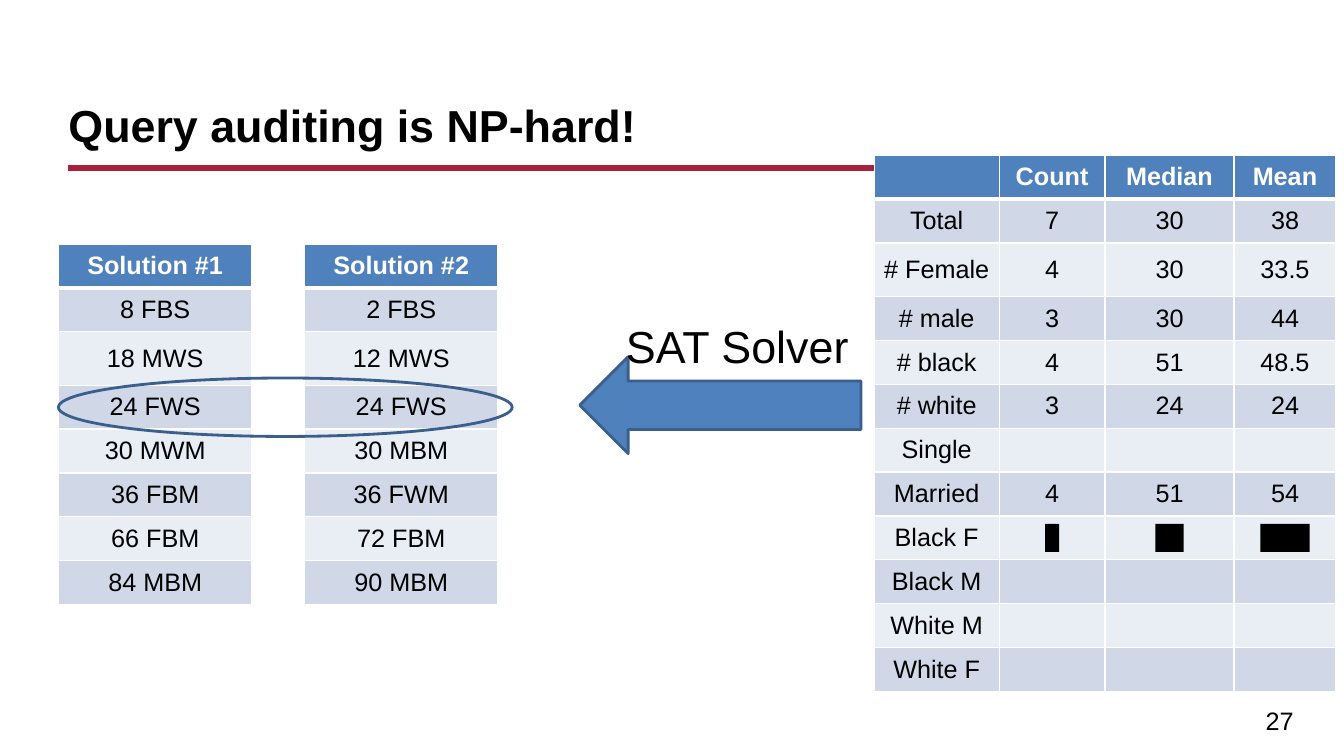
"""Build the slide on the hardness of query auditing."""
from dataclasses import dataclass
from typing import Any

from lxml.etree import SubElement
from pptx import Presentation
from pptx.dml.color import RGBColor
from pptx.enum.shapes import MSO_CONNECTOR, MSO_SHAPE
from pptx.enum.text import MSO_ANCHOR, PP_ALIGN
from pptx.oxml.ns import qn
from pptx.util import Inches, Pt

BLACK, WHITE, BLUE, OUTLINE, RED = "000000", "FFFFFF", "4F81BD", "3A5F8C", "A9203D"
BANDS = ("D0D8E8", "E9EDF4")
TALL_ROW, TALL_ROW_HEIGHT = 2, 0.53
BODY = {"name": "Arial", "size": Pt(18), "bold": False}
HEADER = BODY | {"bold": True}
TITLE = HEADER | {"size": Pt(32)}
CALLOUT = BODY | {"size": Pt(32)}


@dataclass(frozen=True)
class Label:
    text: str
    box: tuple[float, float, float, float]
    formats: dict[str, Any]
    frame: dict[str, Any]
    align: PP_ALIGN = PP_ALIGN.LEFT


@dataclass(frozen=True)
class Grid:
    left: float
    top: float
    height: float
    widths: tuple[float, ...]
    rows: list[tuple[str, ...]]

    def row_heights(self) -> list[float]:
        regular = (self.height - TALL_ROW_HEIGHT) / (len(self.rows) - 1)
        return [TALL_ROW_HEIGHT if row == TALL_ROW else regular
                for row in range(len(self.rows))]


@dataclass(frozen=True)
class Marker:
    kind: MSO_SHAPE
    box: tuple[float, float, float, float]
    fill: str | None = None
    outline: str | None = OUTLINE
    rotation: float = 0


def solution(left: float, *people: str) -> Grid:
    return Grid(left, 2.42, 3.58, (1.92,), [(person,) for person in people])


RULE = (0.67, 1.67, 12.67, 1.67)
LABELS = [
    Label("Query auditing is NP-hard!", (0.58, 0.3, 12.08, 1.25), TITLE,
          {"word_wrap": True, "vertical_anchor": MSO_ANCHOR.BOTTOM}),
    Label("27", (10.1, 6.95, 2.83, 0.39), BODY, {"word_wrap": True}, PP_ALIGN.RIGHT),
]
STATISTICS = Grid(8.67, 1.54, 5.32, (1.24, 1.05, 1.28, 1.01), [
    ("", "Count", "Median", "Mean"),
    ("Total", "7", "30", "38"),
    ("# Female", "4", "30", "33.5"),
    ("# male", "3", "30", "44"),
    ("# black", "4", "51", "48.5"),
    ("# white", "3", "24", "24"),
    ("Single", "", "", ""),
    ("Married", "4", "51", "54"),
    ("Black F", "", "", ""),
    ("Black M", "", "", ""),
    ("White M", "", "", ""),
    ("White F", "", "", ""),
])
REDACTED_ROW, REDACTION_HEIGHT = 8, 0.28
REDACTION_WIDTHS = (0.14, 0.28, 0.49)
ARROW = Marker(MSO_SHAPE.RIGHT_ARROW, (5.75, 3.54, 2.79, 0.96), BLUE, rotation=180)
SOLVER = Label("SAT Solver", (6.11, 3.11, 2.43, 0.64), CALLOUT, {"word_wrap": False})
SOLUTIONS = [
    solution(0.58, "Solution #1", "8 FBS", "18 MWS", "24 FWS", "30 MWM",
             "36 FBM", "66 FBM", "84 MBM"),
    solution(3.02, "Solution #2", "2 FBS", "12 MWS", "24 FWS", "30 MBM",
             "36 FWM", "72 FBM", "90 MBM"),
]
SHARED_PERSON = Marker(MSO_SHAPE.OVAL, (0.58, 3.75, 4.5, 0.58))


def paint(target: Any, color: str) -> None:
    target.solid()
    target.fore_color.rgb = RGBColor.from_string(color)


def write(paragraph: Any, text: str, formats: dict[str, Any], color: str,
          align: PP_ALIGN) -> None:
    paragraph.alignment = align
    run = paragraph.add_run()
    run.text = text
    for name, value in formats.items():
        setattr(run.font, name, value)
    paint(run.font.fill, color)


def draw_label(slide: Any, label: Label) -> None:
    frame = slide.shapes.add_textbox(*map(Inches, label.box)).text_frame
    for name, value in label.frame.items():
        setattr(frame, name, value)
    write(frame.paragraphs[0], label.text, label.formats, BLACK, label.align)


def draw_rule(slide: Any) -> None:
    rule = slide.shapes.add_connector(MSO_CONNECTOR.STRAIGHT, *map(Inches, RULE))
    rule.line.width = Pt(4.5)
    paint(rule.line.fill, RED)
    SubElement(rule._element.spPr, qn("a:effectLst"))


def border(cell: Any, top: float, bottom: float) -> None:
    properties = cell._tc.get_or_add_tcPr()
    for side, width in {"L": 1, "R": 1, "T": top, "B": bottom}.items():
        edge = SubElement(properties, qn(f"a:ln{side}"), w=str(Pt(width)))
        SubElement(SubElement(edge, qn("a:solidFill")), qn("a:srgbClr"), val=WHITE)


def draw_grid(slide: Any, grid: Grid) -> None:
    table = slide.shapes.add_table(
        len(grid.rows), len(grid.widths), Inches(grid.left), Inches(grid.top),
        Inches(sum(grid.widths)), Inches(grid.height)).table
    for column, width in zip(table.columns, grid.widths):
        column.width = Inches(width)
    for index, (values, height) in enumerate(zip(grid.rows, grid.row_heights())):
        table.rows[index].height = Inches(height)
        header = index == 0
        for column, value in enumerate(values):
            cell = table.cell(index, column)
            cell.vertical_anchor = MSO_ANCHOR.MIDDLE
            cell.margin_left = cell.margin_right = Inches(0.05)
            border(cell, top=3 if index == 1 else 1, bottom=3 if header else 1)
            paint(cell.fill, BLUE if header else BANDS[(index - 1) % 2])
            if value:
                write(cell.text_frame.paragraphs[0], value, HEADER if header else BODY,
                      WHITE if header else BLACK, PP_ALIGN.CENTER)


def draw_marker(slide: Any, marker: Marker) -> None:
    shape = slide.shapes.add_shape(marker.kind, *map(Inches, marker.box))
    shape.shadow.inherit = False
    shape.rotation = marker.rotation
    shape.line.width = Pt(2)
    for part, color in ((shape.fill, marker.fill), (shape.line.fill, marker.outline)):
        if color:
            paint(part, color)
        else:
            part.background()


def draw_redactions(slide: Any, grid: Grid) -> None:
    heights = grid.row_heights()
    middle = grid.top + sum(heights[:REDACTED_ROW]) + heights[REDACTED_ROW] / 2
    for column, width in enumerate(REDACTION_WIDTHS, start=1):
        center = grid.left + sum(grid.widths[:column]) + grid.widths[column] / 2
        box = (center - width / 2, middle - REDACTION_HEIGHT / 2, width, REDACTION_HEIGHT)
        draw_marker(slide, Marker(MSO_SHAPE.RECTANGLE, box, BLACK, outline=None))


def main() -> None:
    presentation = Presentation()
    presentation.slide_width, presentation.slide_height = Inches(13.33), Inches(7.5)
    slide = presentation.slides.add_slide(presentation.slide_layouts[6])
    draw_rule(slide)
    for label in LABELS:
        draw_label(slide, label)
    draw_grid(slide, STATISTICS)
    draw_redactions(slide, STATISTICS)
    draw_marker(slide, ARROW)
    draw_label(slide, SOLVER)
    for people in SOLUTIONS:
        draw_grid(slide, people)
    draw_marker(slide, SHARED_PERSON)
    presentation.save("out.pptx")


if __name__ == "__main__":
    main()
